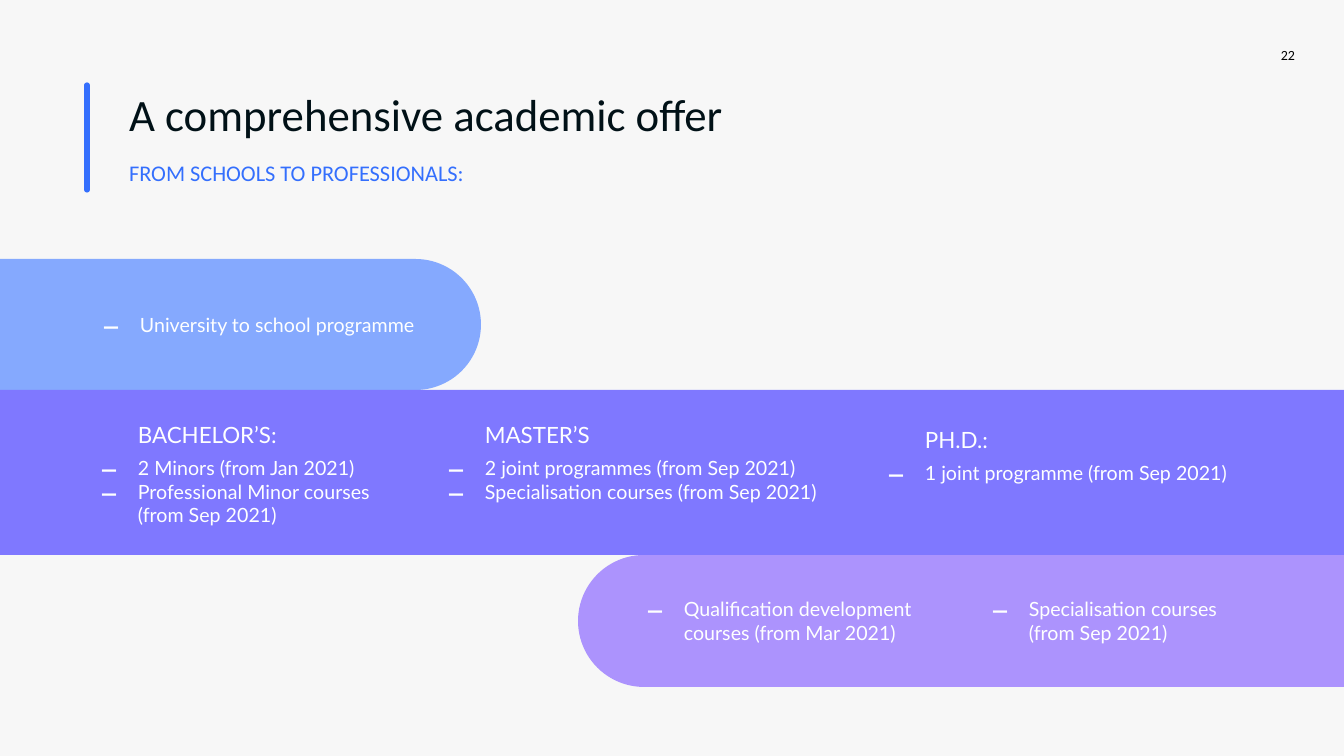
from lxml.etree import SubElement as Sub
from pptx import Presentation
from pptx.dml.color import RGBColor
from pptx.enum.shapes import MSO_CONNECTOR as Conn, MSO_SHAPE as Shape
from pptx.enum.text import MSO_ANCHOR as Anchor, MSO_AUTO_SIZE as Auto, PP_ALIGN as Align
from pptx.oxml.ns import qn
from pptx.util import Emu, Pt

PX = 914400 / 100.8
WHITE, BLUE = "FEFFFF", "346FFD"
INDENT = 39
SCHOOL = ["University to school programme"]
# Left, top, width, heading and items of each degree
DEGREES = [
    (89, 416, 299, "BACHELOR’S:",
     ["2 Minors (from Jan 2021)", "Professional Minor courses\n(from Sep 2021)"]),
    (436, 416, 409, "MASTER’S",
     ["2 joint programmes (from Sep 2021)", "Specialisation courses (from Sep 2021)"]),
    (876, 421, 379, "PH.D.:", ["1 joint programme (from Sep 2021)"]),
]
# Left, width and item of each course for professionals
COURSES = [
    (635, 292, "Qualification development courses (from Mar 2021)"),
    (980, 257, "Specialisation courses\n(from Sep 2021)"),
]


def px(num):
    return Emu(round(num * PX))


def color(code):
    return RGBColor.from_string(code)


def style(para, size, tint, face="Lato"):
    for run in para.runs:
        run.font.size = Pt(size)
        run.font.name = face
        run.font.color.rgb = color(tint)


def place(shape, left, top, width, height):
    shape.left, shape.top = px(left), px(top)
    shape.width, shape.height = px(width), px(height)


def add_band(slide, left, top, width, height, fill, round_end):
    band = slide.shapes.add_shape(
        Shape.ROUNDED_RECTANGLE, px(left), px(top), px(width), px(height))
    band.adjustments[0] = round_end
    band.shadow.inherit = False
    band.fill.solid()
    band.fill.fore_color.rgb = color(fill)
    band.line.fill.background()


def add_bar(slide, left, top, end):
    bar = slide.shapes.add_connector(Conn.STRAIGHT, px(left), px(top), px(left), px(end))
    bar.line.color.rgb = color(BLUE)
    bar.line.width = Pt(3.75)
    bar.line._get_or_add_ln().set("cap", "rnd")
    Sub(bar._element.spPr, qn("a:effectLst"))


def add_dash(para):
    props = para._p.get_or_add_pPr()
    props.set("marL", str(px(INDENT)))
    props.set("indent", str(px(-INDENT)))
    Sub(Sub(props, qn("a:buClr")), qn("a:srgbClr"), val=WHITE)
    Sub(props, qn("a:buSzPct"), val="180000")
    Sub(props, qn("a:buFont"), typeface="Lato")
    Sub(props, qn("a:buChar"), char="–")


def add_list(slide, left, top, width, height, items, head=None):
    frame = slide.shapes.add_textbox(px(left), px(top), px(width), px(height)).text_frame
    frame.word_wrap = True
    frame.auto_size = Auto.SHAPE_TO_FIT_TEXT
    para = frame.paragraphs[0]
    if head:
        para.text = head
        para.space_after = Pt(6)
        para._p.get_or_add_pPr().set("indent", str(px(INDENT)))
        style(para, 16, WHITE)
        para = frame.add_paragraph()
    for num, item in enumerate(items):
        if num:
            para = frame.add_paragraph()
        para.text = item
        add_dash(para)
        style(para, 14, WHITE)


def add_number(slide, text):
    frame = slide.shapes.add_textbox(px(1238), px(44), px(57), px(27)).text_frame
    frame.margin_top = frame.margin_right = 0
    frame.margin_bottom = px(5)
    frame.vertical_anchor = Anchor.MIDDLE
    frame.word_wrap = True
    frame.text = text
    para = frame.paragraphs[0]
    para.alignment = Align.RIGHT
    style(para, 10, "000000", "Calibri")


def set_holder(holder, box, text, size, tint, anchor, gap):
    place(holder, *box)
    frame = holder.text_frame
    frame.text = text
    frame.auto_size = Auto.NONE
    frame.vertical_anchor = anchor
    para = frame.paragraphs[0]
    para.alignment = Align.LEFT
    para.line_spacing = gap
    style(para, size, tint, "Calibri")
    return para


def main():
    deck = Presentation()
    deck.slide_width, deck.slide_height = px(1344), px(756)
    slide = deck.slides.add_slide(deck.slide_layouts[1])
    for spare in list(slide.placeholders)[2:]:
        spare._element.getparent().remove(spare._element)
    slide.background.fill.solid()
    slide.background.fill.fore_color.rgb = color("F7F7F7")

    # Heading
    title, body = slide.placeholders
    set_holder(title, (119, 85, 1065, 64), "A comprehensive academic offer",
               32, "011117", Anchor.MIDDLE, 0.9)
    lead = set_holder(body, (119, 149, 872, 61), "FROM SCHOOLS TO PROFESSIONALS:",
                      16, BLUE, Anchor.TOP, 1.2)
    lead.space_before = Pt(10)
    props = lead._p.get_or_add_pPr()
    props.set("marL", "0")
    props.set("indent", "0")
    Sub(props, qn("a:buNone"))
    add_bar(slide, 87, 85, 190)
    add_number(slide, "22")

    # Bands
    add_band(slide, -106, 259, 587, 131, "85A9FE", 0.5)
    add_band(slide, 578, 555, 884, 132, "AC93FD", 0.5)
    add_band(slide, 0, 390, 1344, 165, "7F78FF", 0)

    # Lists
    add_list(slide, 91, 308, 370, 34, SCHOOL)
    for left, top, width, head, items in DEGREES:
        add_list(slide, left, top, width, 47 + 23 * len(items), items, head)
    for left, width, item in COURSES:
        add_list(slide, left, 592, width, 57, [item])
    deck.save("out.pptx")


if __name__ == "__main__":
    main()
